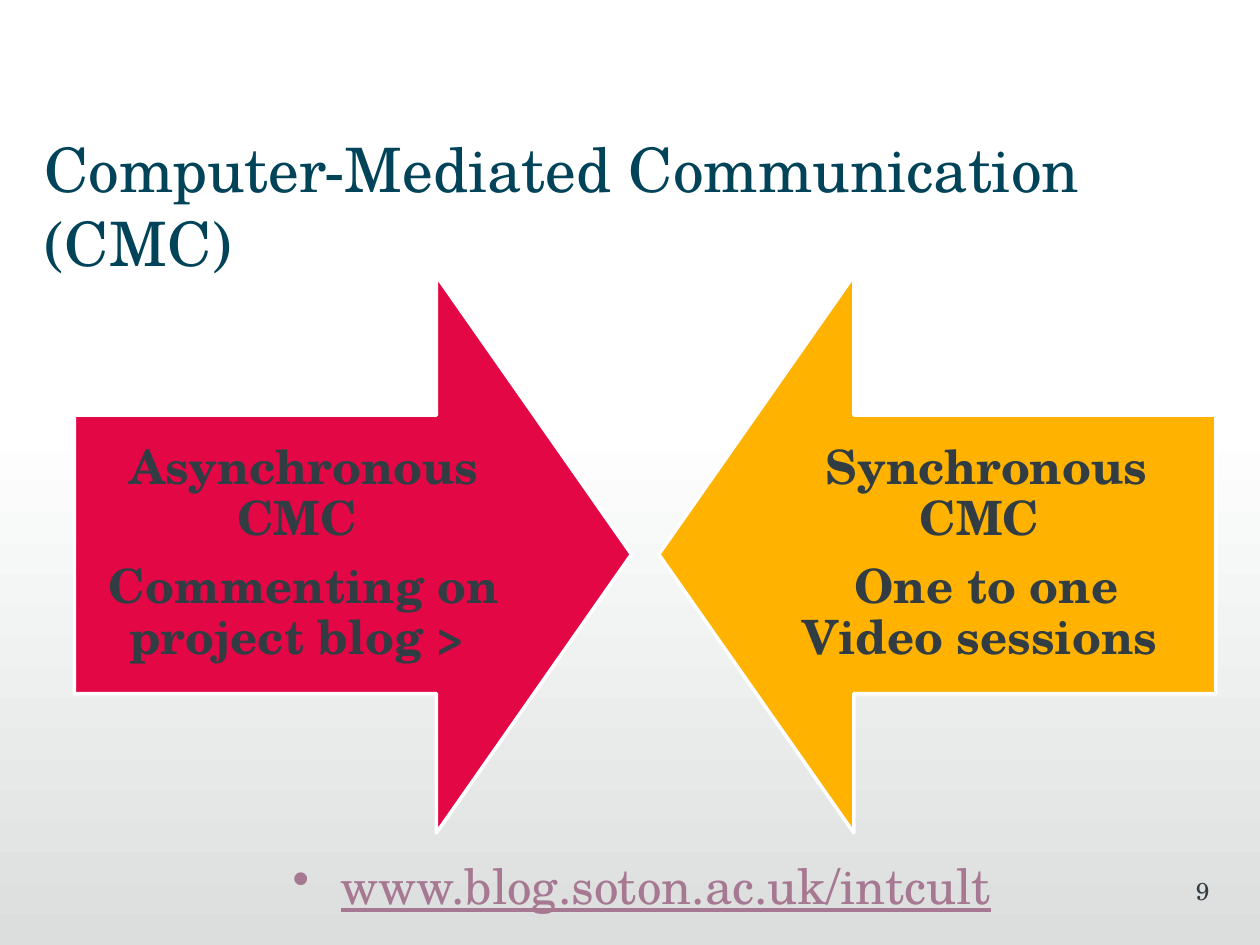
"""Build a slide that sets asynchronous against synchronous computer-mediated communication."""
from dataclasses import dataclass

from lxml import etree
from pptx import Presentation
from pptx.dml.color import RGBColor
from pptx.enum.shapes import MSO_SHAPE
from pptx.enum.text import MSO_ANCHOR, PP_ALIGN
from pptx.oxml.ns import qn
from pptx.util import Cm, Pt

RECTANGLE = MSO_SHAPE.RECTANGLE
DOWN_ARROW = MSO_SHAPE.DOWN_ARROW
TOP, MIDDLE = MSO_ANCHOR.TOP, MSO_ANCHOR.MIDDLE
LEFT, CENTER, RIGHT = PP_ALIGN.LEFT, PP_ALIGN.CENTER, PP_ALIGN.RIGHT


@dataclass(frozen=True)
class Theme:
    font: str = "TeX Gyre Schola"
    white: str = "FFFFFF"
    shade: str = "DCDEDE"
    title: str = "014359"
    body: str = "323D43"
    link: str = "A67891"
    red: str = "E30746"
    amber: str = "FFB300"
    title_size: float = 35
    link_size: float = 28
    label_size: float = 27
    number_size: float = 14


THEME = Theme()
TITLE = "Computer-Mediated Communication (CMC)"
ADDRESS = "www.blog.soton.ac.uk/intcult"
PAGE_NUMBER = "9"
ARROWS = [
    {"color": THEME.red, "rotation": 270, "left": 1.5, "label_shift": 0,
     "lines": ["Asynchronous CMC ", "Commenting on project blog > "]},
    {"color": THEME.amber, "rotation": 90, "left": 13.28, "label_shift": 1,
     "lines": ["Synchronous CMC ", "One to one Video sessions "]},
]
SLIDE_WIDTH, SLIDE_HEIGHT = 25.4, 19.05
SHADE_TOP = 8.46
ARROW_TOP, ARROW_SIZE = 5.56, 11.23
LABEL_WIDTH = 9.25
BULLET_INDENT = 0.97


def add_bullet(paragraph):
    properties = paragraph._p.get_or_add_pPr()
    properties.set("marL", str(Cm(BULLET_INDENT)))
    properties.set("indent", str(-Cm(BULLET_INDENT)))
    etree.SubElement(properties, qn("a:buChar")).set("char", "•")


def add_text(slide, lines, box, *, size, color, insets=(0, 0.13, 0.25, 0.13),
             align=LEFT, anchor=TOP, bold=False, underline=False, bullet=False,
             line_spacing=None, space_after=0):
    frame = slide.shapes.add_textbox(*map(Cm, box)).text_frame
    frame.word_wrap = True
    frame.vertical_anchor = anchor
    frame.margin_left, frame.margin_top, frame.margin_right, frame.margin_bottom = map(Cm, insets)
    for index, line in enumerate(lines):
        paragraph = frame.add_paragraph() if index else frame.paragraphs[0]
        paragraph.alignment = align
        paragraph.line_spacing = line_spacing
        paragraph.space_after = Pt(space_after)
        if bullet:
            add_bullet(paragraph)
        run = paragraph.add_run()
        run.text = line
        run.font.name = THEME.font
        run.font.size = Pt(size)
        run.font.bold = bold
        run.font.underline = underline
        run.font.color.rgb = RGBColor.from_string(color)


def add_background(slide):
    shape = slide.shapes.add_shape(
        RECTANGLE, 0, Cm(SHADE_TOP), Cm(SLIDE_WIDTH), Cm(SLIDE_HEIGHT - SHADE_TOP))
    shape.shadow.inherit = False
    shape.line.fill.background()
    shape.fill.gradient()
    shape.fill.gradient_angle = 270
    for stop, position, color in zip(shape.fill.gradient_stops, (0, 1), (THEME.white, THEME.shade)):
        stop.position = position
        stop.color.rgb = RGBColor.from_string(color)


def add_arrow(slide, arrow):
    shape = slide.shapes.add_shape(
        DOWN_ARROW, Cm(arrow["left"]), Cm(ARROW_TOP), Cm(ARROW_SIZE), Cm(ARROW_SIZE))
    shape.rotation = arrow["rotation"]
    shape.adjustments[0], shape.adjustments[1] = 0.5, 0.35
    shape.shadow.inherit = False
    shape.fill.solid()
    shape.fill.fore_color.rgb = RGBColor.from_string(arrow["color"])
    shape.line.color.rgb = RGBColor.from_string(THEME.white)
    shape.line.width = Pt(2)
    label_left = arrow["left"] + arrow["label_shift"] * (ARROW_SIZE - LABEL_WIDTH)
    add_text(slide, arrow["lines"],
             (label_left, ARROW_TOP + ARROW_SIZE / 4, LABEL_WIDTH, ARROW_SIZE / 2),
             size=THEME.label_size, color=THEME.body, insets=[0.53] * 4, align=CENTER,
             anchor=MIDDLE, bold=True, line_spacing=0.9, space_after=9.5)


def main():
    presentation = Presentation()
    presentation.slide_width, presentation.slide_height = Cm(SLIDE_WIDTH), Cm(SLIDE_HEIGHT)
    slide = presentation.slides.add_slide(presentation.slide_layouts[6])
    add_background(slide)
    add_text(slide, [TITLE], (0.9, 2.52, 23.6, 3.2), size=THEME.title_size, color=THEME.title)
    add_text(slide, [ADDRESS], (5.9, 17.12, 14.35, 1.5), size=THEME.link_size,
             color=THEME.link, underline=True, bullet=True)
    add_text(slide, [PAGE_NUMBER], (19.1, 17.53, 5.28, 1.27), size=THEME.number_size,
             color=THEME.body, insets=(0.25, 0.13, 0, 0.13), align=RIGHT)
    for arrow in ARROWS:
        add_arrow(slide, arrow)
    presentation.save("out.pptx")


if __name__ == "__main__":
    main()
